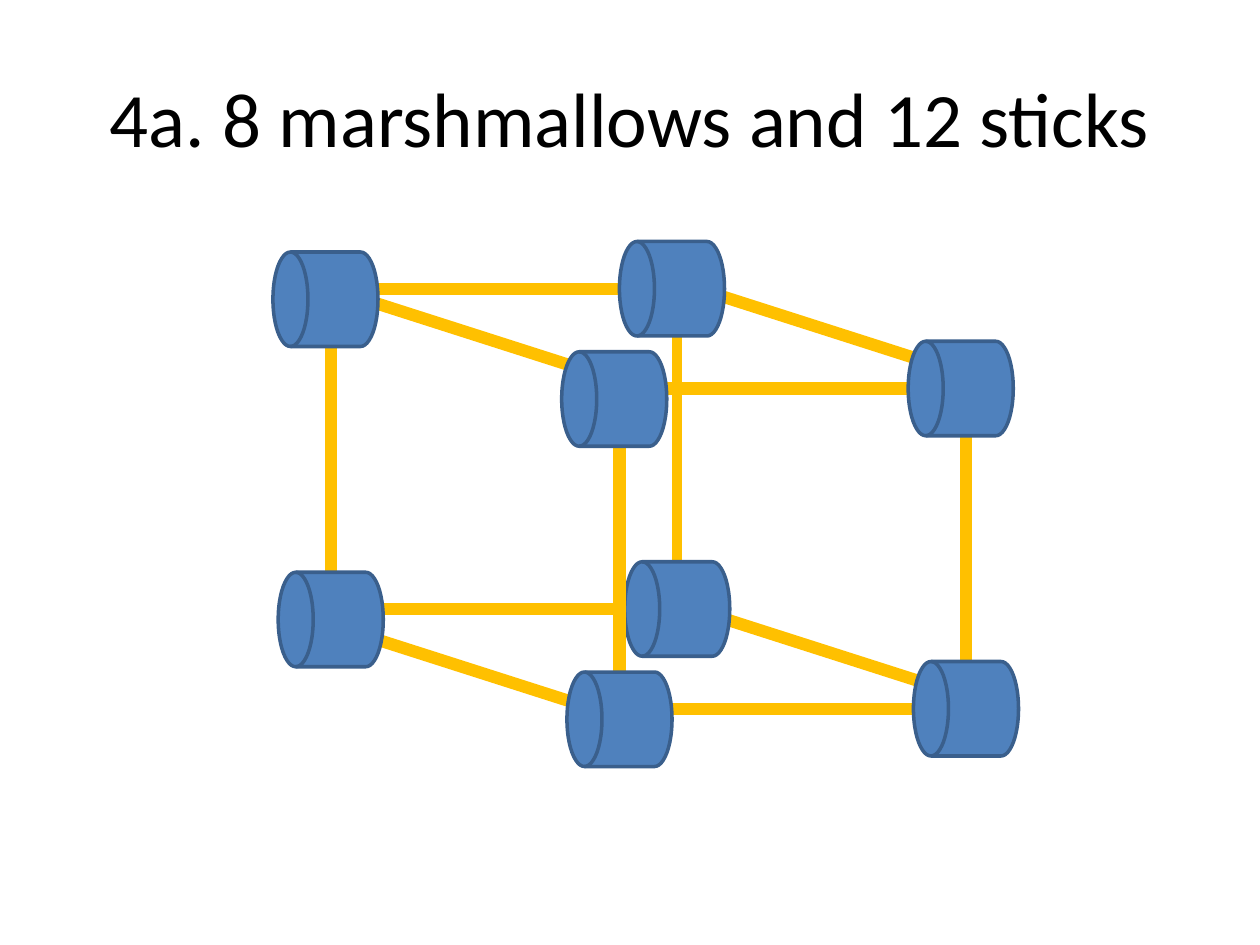
"""Build a slide showing a cuboid made of marshmallows and sticks."""
from dataclasses import dataclass

from lxml import etree
from pptx import Presentation
from pptx import util as u
from pptx.dml.color import RGBColor
from pptx.enum import shapes, text
from pptx.oxml.ns import qn


@dataclass(frozen=True)
class Theme:
    font: str = "Calibri"
    title_size: int = 44
    ink: str = "000000"
    stick: str = "FFC000"
    marshmallow: str = "4F81BD"
    outline: str = "3A5F8C"
    stick_width: int = 7
    thin_stick_width: int = 6
    outline_width: int = 2


class SlideBuilder:
    def __init__(self, slide, theme):
        self.slide = slide
        self.theme = theme

    def title(self, words, left, top, width, height):
        shape = self.slide.shapes.title
        shape.left, shape.top = u.Pt(left), u.Pt(top)
        shape.width, shape.height = u.Pt(width), u.Pt(height)
        frame = shape.text_frame
        frame.vertical_anchor = text.MSO_ANCHOR.MIDDLE
        paragraph = frame.paragraphs[0]
        paragraph.alignment = text.PP_ALIGN.CENTER
        run = paragraph.add_run()
        run.text = words
        run.font.name = self.theme.font
        run.font.size = u.Pt(self.theme.title_size)
        run.font.color.rgb = RGBColor.from_string(self.theme.ink)

    def stick(self, x, y, across, down, width=None):
        connector = self.slide.shapes.add_connector(
            shapes.MSO_CONNECTOR.STRAIGHT,
            u.Pt(x), u.Pt(y), u.Pt(x + across), u.Pt(y + down))
        connector.line.color.rgb = RGBColor.from_string(self.theme.stick)
        connector.line.width = u.Pt(width or self.theme.stick_width)
        properties = connector._element.find(qn("p:spPr"))
        etree.SubElement(properties, qn("a:effectLst"))

    def marshmallow(self, left, top):
        shape = self.slide.shapes.add_shape(
            shapes.MSO_SHAPE.FLOWCHART_MAGNETIC_DISK,
            u.Pt(left), u.Pt(top), u.Pt(54), u.Pt(60))
        shape.rotation = 270
        shape.shadow.inherit = False
        shape.fill.solid()
        shape.fill.fore_color.rgb = RGBColor.from_string(self.theme.marshmallow)
        shape.line.color.rgb = RGBColor.from_string(self.theme.outline)
        shape.line.width = u.Pt(self.theme.outline_width)

    def face(self, x, y, right_stick_width=None):
        edge = 204
        self.stick(x + 228, y + 18, 0, edge, right_stick_width)
        self.stick(x + 30, y + 18, 0, edge)
        for row_x, row_y in ((x, y), (x + 3, y + 183)):
            self.stick(row_x + 24, row_y + 24, edge, 0)
            self.marshmallow(row_x, row_y)
            self.marshmallow(row_x + 198, row_y - 6)


def main():
    presentation = Presentation()
    presentation.slide_width, presentation.slide_height = u.Pt(720), u.Pt(540)
    slide = presentation.slides.add_slide(presentation.slide_layouts[5])
    theme = Theme()
    builder = SlideBuilder(slide, theme)

    builder.title("4a. 8 marshmallows and 12 sticks", 36, 21.6, 648, 90)
    for x, y in ((189, 357), (387, 345), (399, 165), (189, 165)):
        builder.stick(x, y, 150, 48)
    back_x, back_y = 159, 141
    builder.face(back_x, back_y, theme.thin_stick_width)
    builder.face(back_x + 165, back_y + 57)

    presentation.save("out.pptx")


if __name__ == "__main__":
    main()
